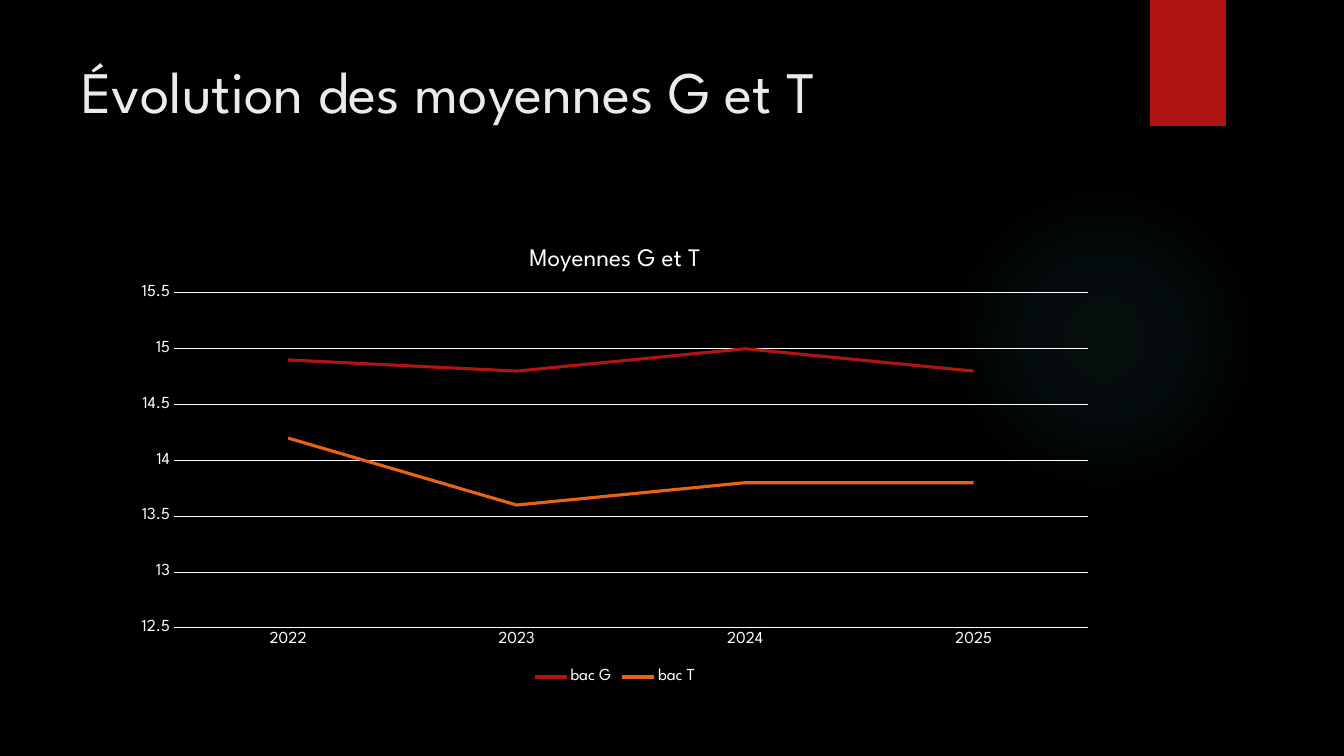
import pptx
import pptx.chart.data
import pptx.dml.color
import pptx.enum.chart
import pptx.enum.shapes
import pptx.enum.text
import pptx.oxml
import pptx.oxml.ns
import pptx.util

TITLE = "Évolution des moyennes G et T"
CHART_TITLE = "Moyennes G et T"
YEARS = ["2022", "2023", "2024", "2025"]
AVERAGES = [
    ("bac G", (14.9, 14.8, 15, 14.8), "B01513"),
    ("bac T", (14.2, 13.6, 13.8, 13.8), "EA6312"),
]
FONT = "League Spartan"
BLACK, WHITE, PALE, RED, TEAL = "000000", "FFFFFF", "EBEBEB", "B01513", "50B9C1"

# Boxes are left, top, width, height in px
SLIDE_SIZE = (1344, 756)
TITLE_BOX = (71, 50, 1037, 154)
GLOW_BOX = (949, 184, 310, 310)
BOOKMARK_BOX = (1150, 0, 76, 126)
CHART_BOX = (122, 226, 986, 463)
PLOT_BOX = (174, 293, 914, 335)
GLOW_STOPS = [(0, 7), (36, 6), (69, 0)]  # position %, opacity %
EMU_PER_PX = 914400 / 100.8


def px(*lengths):
    return [pptx.util.Emu(round(length * EMU_PER_PX)) for length in lengths]


def rgb(color):
    return pptx.dml.color.RGBColor.from_string(color)


def style_font(font, size, color):
    font.name, font.size, font.bold = FONT, pptx.util.Pt(size), False
    font.color.rgb = rgb(color)


def style_line(line, color, width):
    line.color.rgb = rgb(color)
    line.width = pptx.util.Pt(width)


def add_decoration(slide, preset, box):
    shape = slide.shapes.add_shape(preset, *px(*box))
    shape.shadow.inherit = False
    shape.line.fill.background()
    shape.fill.solid()
    shape.fill.fore_color.rgb = rgb(RED)
    return shape


def fill_with_glow(shape):
    """Replace the solid fill by a radial gradient that fades out."""
    stops = "".join(
        f'<a:gs pos="{position * 1000}"><a:srgbClr val="{TEAL}">'
        f'<a:alpha val="{opacity * 1000}"/></a:srgbClr></a:gs>'
        for position, opacity in GLOW_STOPS
    )
    gradient = pptx.oxml.parse_xml(
        f'<a:gradFill {pptx.oxml.ns.nsdecls("a")} rotWithShape="1"><a:gsLst>{stops}</a:gsLst>'
        '<a:path path="circle"><a:fillToRect l="50000" t="50000" r="50000" b="50000"/>'
        '</a:path></a:gradFill>'
    )
    properties = shape.element.spPr
    properties.replace(properties.find(pptx.oxml.ns.qn("a:solidFill")), gradient)


def place_plot(chart):
    """Fix the inner plot area at PLOT_BOX."""
    left, top, width, height = CHART_BOX
    plot_left, plot_top, plot_width, plot_height = PLOT_BOX
    fractions = {
        "x": (plot_left - left) / width,
        "y": (plot_top - top) / height,
        "w": plot_width / width,
        "h": plot_height / height,
    }
    modes = '<c:xMode val="edge"/><c:yMode val="edge"/>'
    sizes = "".join(f'<c:{key} val="{value:.4f}"/>' for key, value in fractions.items())
    layout = pptx.oxml.parse_xml(
        f'<c:layout {pptx.oxml.ns.nsdecls("c")}><c:manualLayout>'
        f'<c:layoutTarget val="inner"/>{modes}{sizes}</c:manualLayout></c:layout>'
    )
    plot_area = chart.element.find(".//" + pptx.oxml.ns.qn("c:plotArea"))
    for old_layout in plot_area.findall(pptx.oxml.ns.qn("c:layout")):
        plot_area.remove(old_layout)
    plot_area.insert(0, layout)


def add_averages_chart(slide):
    data = pptx.chart.data.CategoryChartData()
    data.categories = YEARS
    for name, values, _ in AVERAGES:
        data.add_series(name, values)
    chart = slide.shapes.add_chart(
        pptx.enum.chart.XL_CHART_TYPE.LINE, *px(*CHART_BOX), data
    ).chart
    style_font(chart.font, 12, WHITE)

    chart.has_title = True
    chart.chart_title.include_in_layout = False
    chart.chart_title.text_frame.text = CHART_TITLE
    style_font(chart.chart_title.text_frame.paragraphs[0].font, 18, WHITE)
    chart.has_legend = True
    chart.legend.position = pptx.enum.chart.XL_LEGEND_POSITION.BOTTOM
    chart.legend.include_in_layout = False
    style_font(chart.legend.font, 12, WHITE)

    for axis in (chart.category_axis, chart.value_axis):
        axis.major_tick_mark = axis.minor_tick_mark = pptx.enum.chart.XL_TICK_MARK.NONE
        style_font(axis.tick_labels.font, 12, WHITE)
    style_line(chart.category_axis.format.line, WHITE, 0.75)
    value_axis = chart.value_axis
    value_axis.minimum_scale, value_axis.maximum_scale = 12.5, 15.5
    value_axis.major_unit = 0.5
    value_axis.tick_labels.number_format = "General"
    value_axis.tick_labels.number_format_is_linked = False
    value_axis.format.line.fill.background()
    style_line(value_axis.major_gridlines.format.line, WHITE, 0.75)

    chart.plots[0].vary_by_categories = False
    for series, (_, _, color) in zip(chart.plots[0].series, AVERAGES):
        series.smooth = False
        style_line(series.format.line, color, 2.25)
    place_plot(chart)


def main():
    presentation = pptx.Presentation()
    presentation.slide_width, presentation.slide_height = px(*SLIDE_SIZE)
    slide = presentation.slides.add_slide(presentation.slide_layouts[5])
    slide.background.fill.solid()
    slide.background.fill.fore_color.rgb = rgb(BLACK)

    shapes = pptx.enum.shapes.MSO_SHAPE
    fill_with_glow(add_decoration(slide, shapes.OVAL, GLOW_BOX))
    add_decoration(slide, shapes.RECTANGLE, BOOKMARK_BOX)

    title = slide.shapes.title
    title.left, title.top, title.width, title.height = px(*TITLE_BOX)
    title.text_frame.text = TITLE
    title.text_frame.vertical_anchor = pptx.enum.text.MSO_ANCHOR.TOP
    paragraph = title.text_frame.paragraphs[0]
    paragraph.alignment = pptx.enum.text.PP_ALIGN.LEFT
    style_font(paragraph.font, 42, PALE)

    add_averages_chart(slide)
    presentation.save("out.pptx")


if __name__ == "__main__":
    main()
